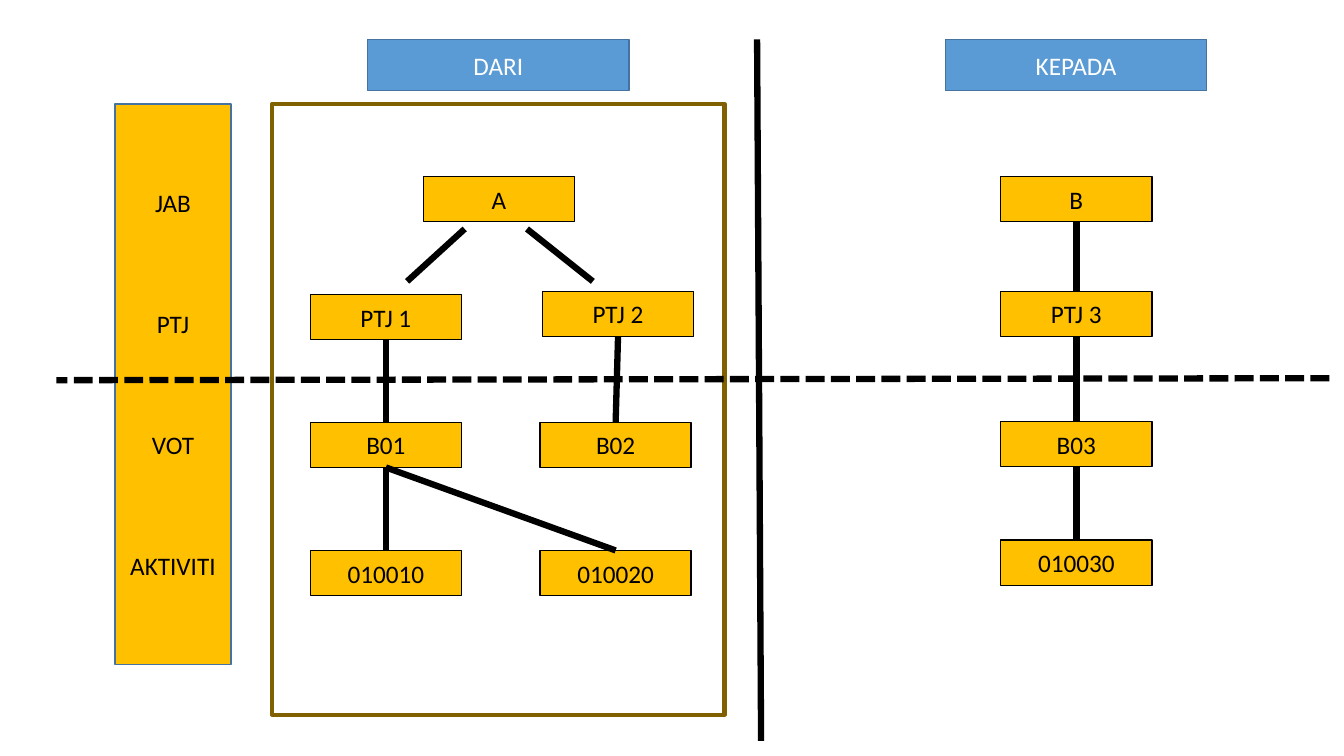
from dataclasses import dataclass

from lxml.etree import SubElement
from pptx import Presentation
from pptx.dml.color import RGBColor
from pptx.enum.dml import MSO_LINE
from pptx.enum.shapes import MSO_CONNECTOR, MSO_SHAPE
from pptx.enum.text import MSO_ANCHOR, PP_ALIGN
from pptx.oxml.ns import qn
from pptx.util import Cm, Pt


@dataclass(frozen=True)
class Theme:
    gold: RGBColor = RGBColor(0xFF, 0xC0, 0x00)
    blue: RGBColor = RGBColor(0x5B, 0x9B, 0xD5)
    dark_blue: RGBColor = RGBColor(0x43, 0x73, 0x9E)
    brown: RGBColor = RGBColor(0x80, 0x60, 0x00)
    black: RGBColor = RGBColor(0, 0, 0)
    white: RGBColor = RGBColor(0xFF, 0xFF, 0xFF)
    font: str = "Calibri"
    text_size: Pt = Pt(18)
    thin: Pt = Pt(1)
    medium: Pt = Pt(3)
    thick: Pt = Pt(4.5)


theme = Theme()
deck = Presentation()
deck.slide_width, deck.slide_height = Cm(33.87), Cm(19.05)
page = deck.slides.add_slide(deck.slide_layouts[6])


def add_box(text, position, size, fill, outline, ink=theme.black, weight=theme.thin):
    """Add a rectangle with one centred paragraph per line of text."""
    box = page.shapes.add_shape(
        MSO_SHAPE.RECTANGLE, *(Cm(length) for length in (*position, *size)))
    box.shadow.inherit = False
    box.fill.solid()
    box.fill.fore_color.rgb = fill
    box.line.color.rgb = outline
    box.line.width = weight
    frame = box.text_frame
    frame.text = text
    frame.vertical_anchor = MSO_ANCHOR.MIDDLE
    for para in frame.paragraphs:
        para.alignment = PP_ALIGN.CENTER
        for span in para.runs:
            span.font.name = theme.font
            span.font.size = theme.text_size
            span.font.color.rgb = ink
    return box


def add_line(start=(0, 0), end=(0, 0)):
    line = page.shapes.add_connector(
        MSO_CONNECTOR.STRAIGHT, *(Cm(length) for length in (*start, *end)))
    line.line.color.rgb = theme.black
    line.line.width = theme.thick
    SubElement(line._element.spPr, qn("a:effectLst"))
    return line


# Level names down the left side
levels = add_box("JAB\nPTJ\nVOT\nAKTIVITI", (2.9, 2.62), (2.92, 14.12),
                 theme.gold, theme.dark_blue)
levels.text_frame.margin_left = levels.text_frame.margin_right = 0
for para in levels.text_frame.paragraphs[1:]:
    para.space_before = Pt(64.8)

# The two sides, their divider and the frame of the left one
add_line((19.08, 0.99), (19.18, 18.67))
add_box("", (6.86, 2.62), (11.4, 15.39), theme.white, theme.brown, weight=theme.medium)
for heading, left in (("DARI", 9.27), ("KEPADA", 23.83)):
    add_box(heading, (left, 0.99), (6.58, 1.3), theme.blue, theme.dark_blue, theme.white)

# Units of the tree: label, left, top
units = [
    ("A", 10.67, 4.45), ("B", 25.22, 4.45),
    ("PTJ 1", 7.82, 7.42), ("PTJ 2", 13.67, 7.34), ("PTJ 3", 25.22, 7.34),
    ("B01", 7.82, 10.64), ("B02", 13.61, 10.64), ("B03", 25.22, 10.62),
    ("010010", 7.82, 13.87), ("010020", 13.61, 13.87), ("010030", 25.22, 13.61),
]
boxes = {label: add_box(label, (left, top), (3.81, 1.14), theme.gold, theme.black)
         for label, left, top in units}

# Branches under A stand clear of the boxes
add_line((11.71, 5.77), (10.26, 7.09))
add_line((13.28, 5.77), (14.94, 7.09))

# All other branches join bottom to top
for parent, child in (("PTJ 1", "B01"), ("PTJ 2", "B02"),
                      ("B01", "010010"), ("B01", "010020"),
                      ("B", "PTJ 3"), ("PTJ 3", "B03"), ("B03", "010030")):
    branch = add_line()
    branch.begin_connect(boxes[parent], 2)
    branch.end_connect(boxes[child], 0)

boundary = add_line((33.5, 9.53), (1.42, 9.58))
boundary.line.dash_style = MSO_LINE.SQUARE_DOT

deck.save("out.pptx")
